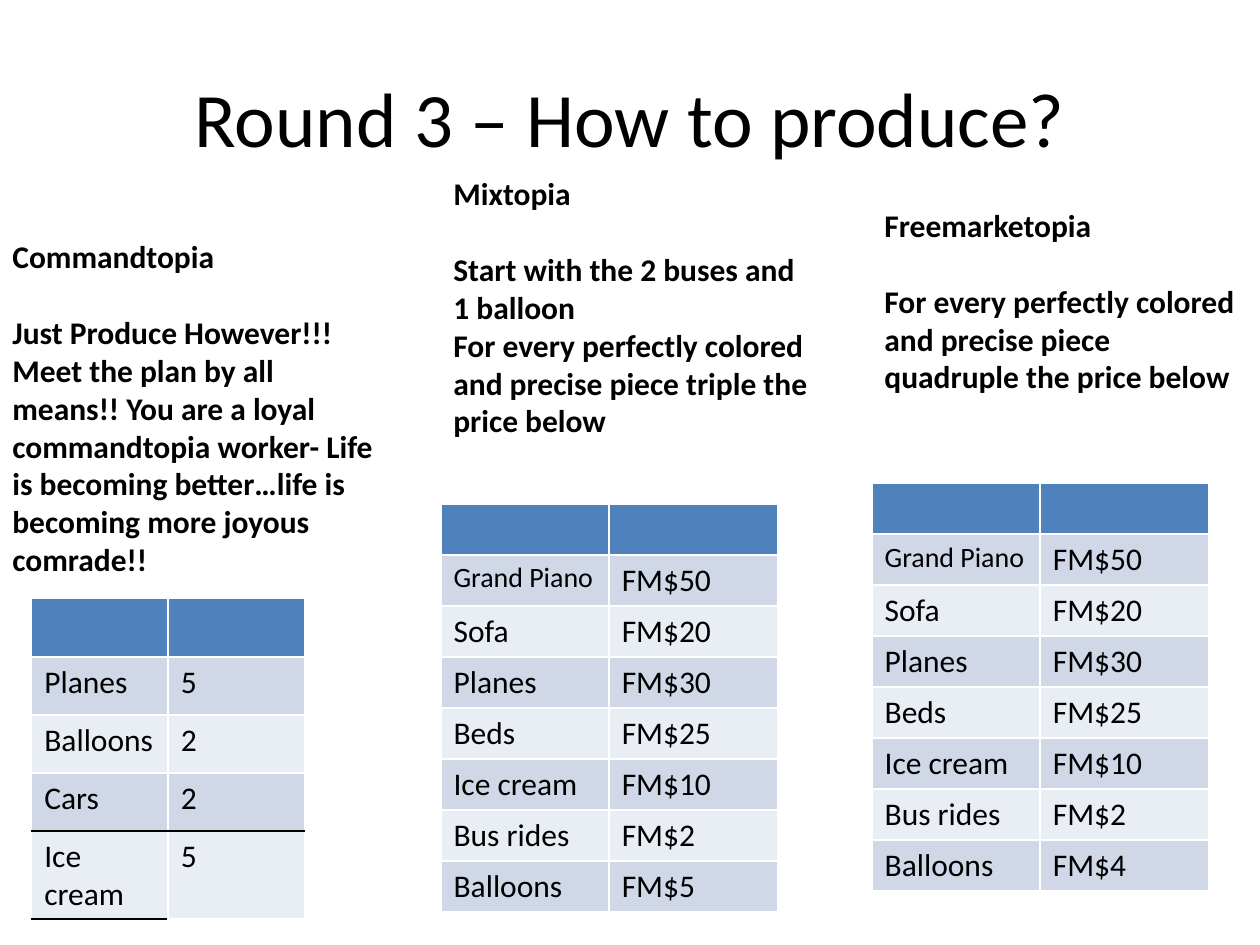
from dataclasses import dataclass

from lxml import etree
from pptx import Presentation
from pptx import util as u
from pptx.dml import color
from pptx.enum import text
from pptx.oxml import ns


@dataclass(frozen=True)
class Theme:
    font: str = "Calibri"
    ink: str = "000000"
    header: str = "4F81BD"
    bands: tuple = ("D0D8E8", "E9EDF4")
    title: int = 44
    body: int = 18
    small: int = 16
    gap: int = 22


THEME = Theme()
TEXT_WIDTH = 7.82
PRICE_BOX = (6.78, 8.23)

COMMAND_ROWS = [("Planes", "5"), ("Balloons", "2"), ("Cars", "2"), ("Ice cream", "5")]
COMMAND_RULES = {
    (3, 0): ("lnB",),
    (3, 1): ("lnB",),
    (4, 0): ("lnT", "lnB"),
    (4, 1): ("lnT",),
}


def price_rows(balloon_price):
    return [
        ("Grand Piano", "FM$50"),
        ("Sofa", "FM$20"),
        ("Planes", "FM$30"),
        ("Beds", "FM$25"),
        ("Ice cream", "FM$10"),
        ("Bus rides", "FM$2"),
        ("Balloons", balloon_price),
    ]


def style_runs(tf, size, bold=False):
    for p in tf.paragraphs:
        for r in p.runs:
            r.font.name = THEME.font
            r.font.size = u.Pt(size)
            r.font.bold = bold
            r.font.color.rgb = color.RGBColor.from_string(THEME.ink)


def add_title(s, left, top, width, height, title):
    sp = s.shapes.title
    sp.left, sp.top, sp.width, sp.height = map(u.Cm, (left, top, width, height))
    tf = sp.text_frame
    tf.text = title
    tf.vertical_anchor = text.MSO_ANCHOR.MIDDLE
    tf.paragraphs[0].alignment = text.PP_ALIGN.CENTER
    style_runs(tf, THEME.title)


def add_rules(cell, sides):
    tc_pr = cell._tc.get_or_add_tcPr()
    for side in sides:
        ln = etree.SubElement(tc_pr, ns.qn(f"a:{side}"), w=str(u.Pt(1)))
        fill = etree.SubElement(ln, ns.qn("a:solidFill"))
        etree.SubElement(fill, ns.qn("a:srgbClr"), val=THEME.ink)


def add_goods_table(s, left, top, width, height, rows, rules):
    grid = [("", ""), *rows]
    box = map(u.Cm, (left, top, width, height))
    table = s.shapes.add_table(len(grid), 2, *box).table
    for i, values in enumerate(grid):
        for j, value in enumerate(values):
            cell = table.cell(i, j)
            add_rules(cell, rules.get((i, j), ()))
            cell.fill.solid()
            fill = THEME.bands[(i - 1) % 2] if i else THEME.header
            cell.fill.fore_color.rgb = color.RGBColor.from_string(fill)
            cell.text_frame.text = value
            size = THEME.small if value == "Grand Piano" else THEME.body
            style_runs(cell.text_frame, size)


def add_instructions(s, left, top, width, height, name, lines):
    sp = s.shapes.add_textbox(*map(u.Cm, (left, top, width, height)))
    tf = sp.text_frame
    tf.word_wrap = True
    tf.text = "\n".join([name, *lines])
    tf.paragraphs[0].space_after = u.Pt(THEME.gap)
    style_runs(tf, THEME.body, bold=True)


def add_country(s, left, top, height, name, lines, table_offset, table_size, rows, rules):
    dx, dy = table_offset
    add_instructions(s, left, top, TEXT_WIDTH, height, name, lines)
    add_goods_table(s, left + dx, top + dy, *table_size, rows, rules)


def main():
    prs = Presentation()
    prs.slide_width, prs.slide_height = u.Cm(25.4), u.Cm(19.05)
    s = prs.slides.add_slide(prs.slide_layouts[5])
    add_title(s, 1.27, 0.76, 22.86, 3.18, "Round 3 – How to produce?")
    add_country(
        s, 0, 4.65, 10.26, "Commandtopia",
        [
            "Just Produce However!!!",
            "Meet the plan by all means!! You are a loyal commandtopia worker- Life "
            "is becoming better…life is becoming more joyous comrade!!",
        ],
        (0.64, 7.42), (5.5, 5.85), COMMAND_ROWS, COMMAND_RULES,
    )
    add_country(
        s, 8.89, 3.38, 8.71, "Mixtopia",
        [
            "Start with the 2 buses and 1 balloon",
            "For every perfectly colored and precise piece triple the price below",
        ],
        (0, 6.78), PRICE_BOX, price_rows("FM$5"), {},
    )
    add_country(
        s, 17.58, 4.02, 4.11, "Freemarketopia",
        ["For every perfectly colored and precise piece quadruple the price below"],
        (0, 5.72), PRICE_BOX, price_rows("FM$4"), {},
    )
    prs.save("out.pptx")


if __name__ == "__main__":
    main()
